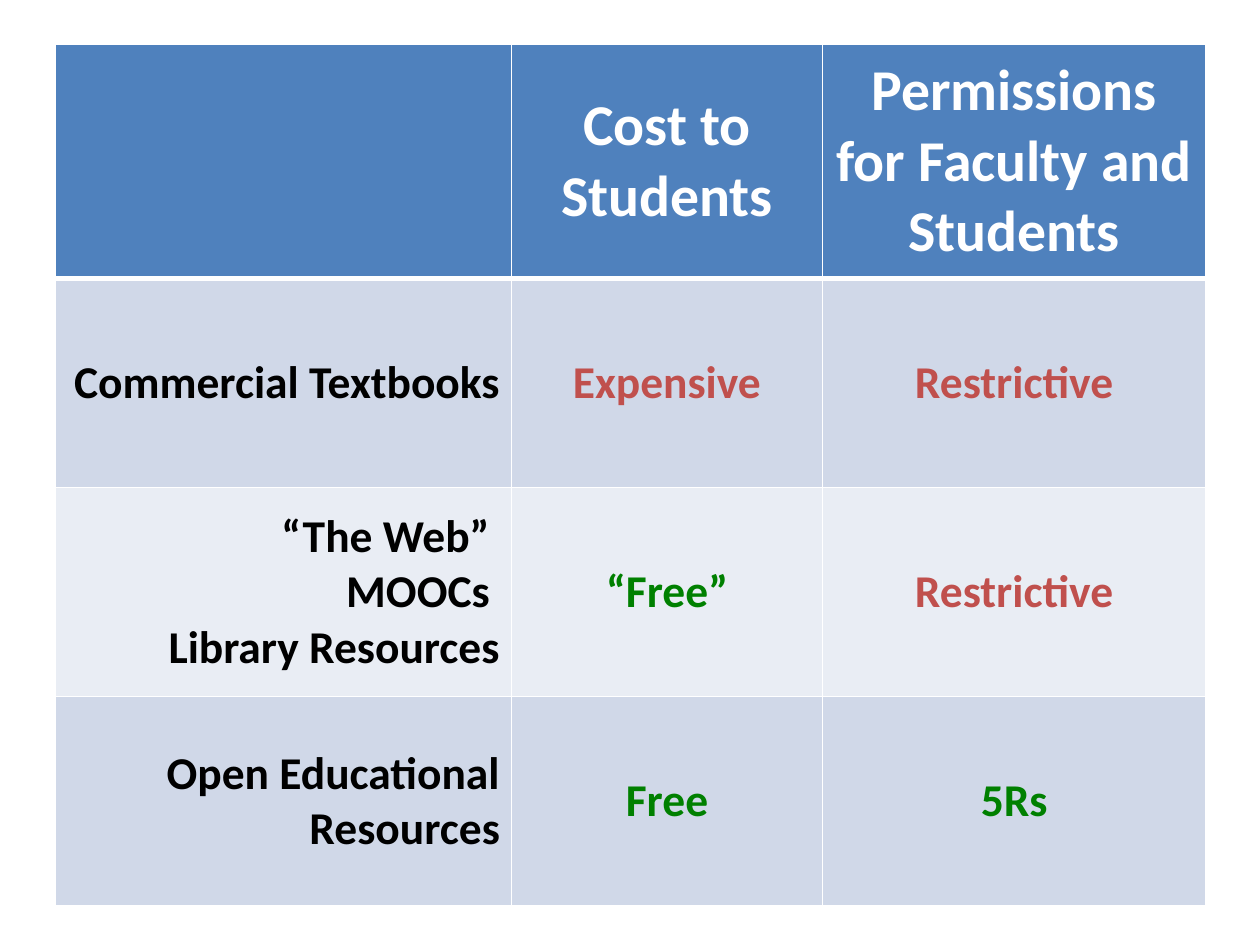
from lxml import etree
from pptx import Presentation
from pptx import util as u
from pptx.dml import color
from pptx.enum import text
from pptx.oxml import ns

COLORS = {
    "header": "4F81BD", "odd": "D0D8E8", "even": "E9EDF4", "white": "FFFFFF",
    "black": "000000", "red": "C0504D", "green": "008000",
}
COLS = [3.62, 2.47, 3.04]
ROWS = [1.86, 1.66, 1.66, 1.66]
FILLS = ["header", "odd", "even", "odd"]
CELLS = [
    [("", "white"), ("Cost to Students", "white"),
     ("Permissions for Faculty and Students", "white")],
    [("Commercial Textbooks", "black"), ("Expensive", "red"), ("Restrictive", "red")],
    [("“The Web” \nMOOCs \nLibrary Resources", "black"), ("“Free”", "green"),
     ("Restrictive", "red")],
    [("Open Educational Resources", "black"), ("Free", "green"), ("5Rs", "green")],
]


def add_border(cell, side, width):
    tc_pr = cell._tc.get_or_add_tcPr()
    ln = etree.SubElement(tc_pr, ns.qn("a:ln" + side), w=str(u.Pt(width)))
    fill = etree.SubElement(ln, ns.qn("a:solidFill"))
    etree.SubElement(fill, ns.qn("a:srgbClr"), val=COLORS["white"])


prs = Presentation()
prs.slide_width, prs.slide_height = u.Inches(10), u.Inches(7.5)
s = prs.slides.add_slide(prs.slide_layouts[6])
table = s.shapes.add_table(
    len(ROWS), len(COLS), u.Inches(0.44), u.Inches(0.35),
    u.Inches(sum(COLS)), u.Inches(sum(ROWS))).table
for col, width in zip(table.columns, COLS):
    col.width = u.Inches(width)
for row, height in zip(table.rows, ROWS):
    row.height = u.Inches(height)

for i, row in enumerate(CELLS):
    for j, (words, tint) in enumerate(row):
        cell = table.cell(i, j)
        for side in "LRTB":
            under_header = (i, side) in [(0, "B"), (1, "T")]
            add_border(cell, side, 3 if under_header else 1)
        cell.fill.solid()
        cell.fill.fore_color.rgb = color.RGBColor.from_string(COLORS[FILLS[i]])
        cell.vertical_anchor = text.MSO_ANCHOR.MIDDLE
        for side, inset in {"left": 0.09, "right": 0.09, "top": 0.05, "bottom": 0.05}.items():
            setattr(cell, "margin_" + side, u.Inches(inset))
        if not words:
            continue
        p = cell.text_frame.paragraphs[0]
        p.text = words
        right = i > 0 and j == 0
        p.alignment = text.PP_ALIGN.RIGHT if right else text.PP_ALIGN.CENTER
        font = {"name": "Calibri", "size": u.Pt(26 if i else 33), "bold": True}
        for r in p.runs:
            for key, value in font.items():
                setattr(r.font, key, value)
            r.font.color.rgb = color.RGBColor.from_string(COLORS[tint])

prs.save("out.pptx")
